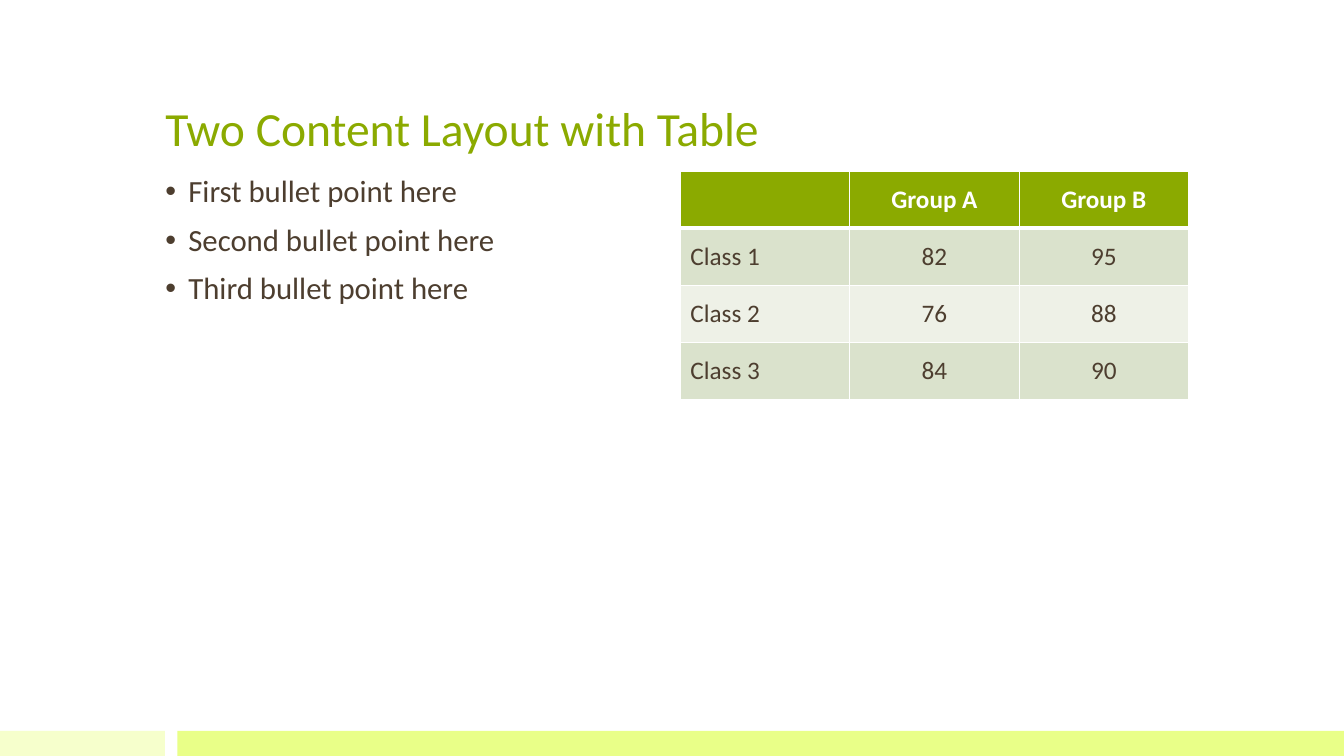
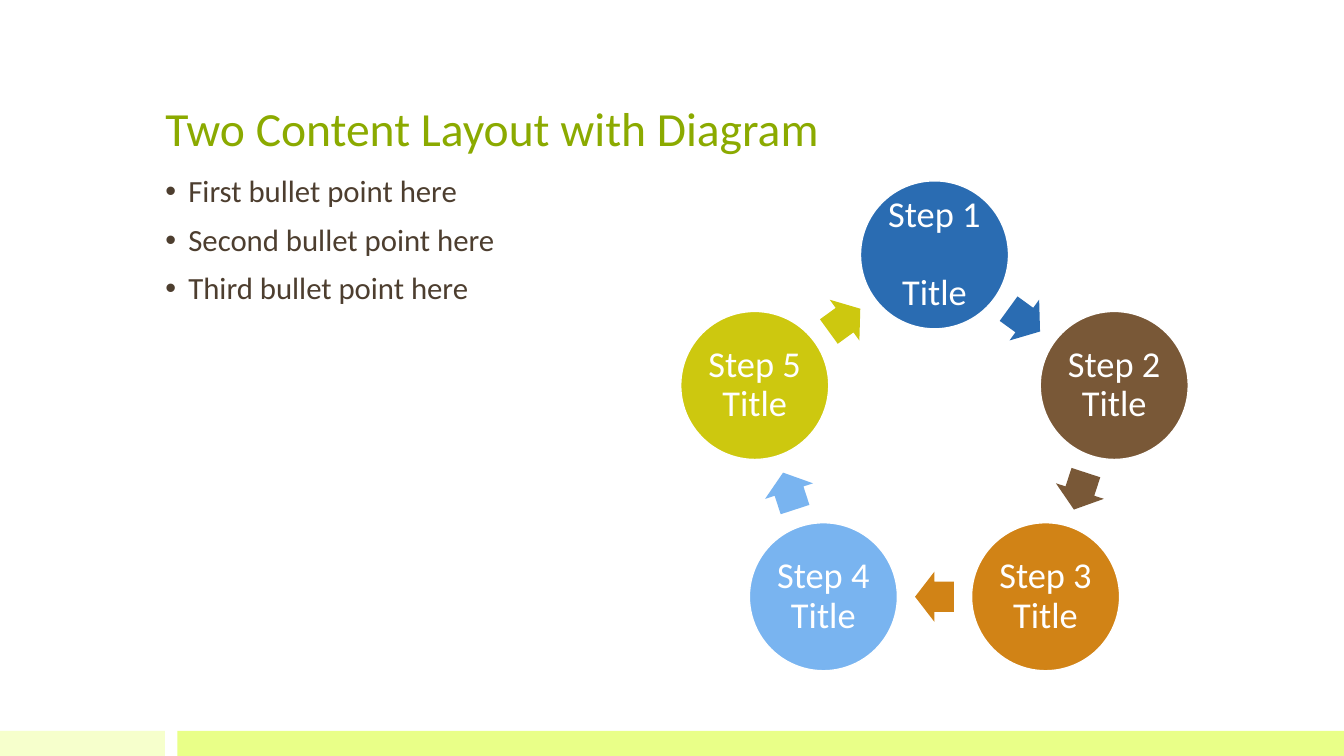
from collections import namedtuple
from copy import deepcopy
from dataclasses import dataclass
from math import cos, pi, radians, sin

from lxml.etree import SubElement
from pptx import Presentation
from pptx.dml.color import RGBColor
from pptx.enum.shapes import MSO_SHAPE
from pptx.enum.text import MSO_ANCHOR, PP_ALIGN
from pptx.oxml.ns import qn
from pptx.util import Emu, Pt

Box = namedtuple("Box", "x y w h")


@dataclass(frozen=True)
class Theme:
    """Colours, font and type sizes of the deck."""
    font: str = "Calibri"
    accent: str = "8BAA00"
    ink: str = "4D3E2F"
    white: str = "FFFFFF"
    bands: tuple = ("F6FFCC", "E9FF88")
    rows: tuple = ("DAE2CC", "EEF1E7")
    steps: tuple = ("2A6CB2", "795837", "D18316", "79B4F0", "CDC80F")
    title_size: int = 34
    body_size: int = 22
    table_size: int = 18
    step_size: int = 26


T = Theme()
SLIDE = Box(0, 0, 1280, 720)
TITLE = Box(148, 29, 984, 124)
LEFT = Box(148, 163, 484, 485)
RIGHT = Box(648, 163, 484, 485)
TABLE_HEIGHT = 218
BAND_TOP, BAND_SPLIT, BAND_GAP = 696, 157, 12
CIRCLE, RADIUS = 141, 180
ARROW_W, ARROW_H = 37, 48

BULLETS = ["First bullet point here", "Second bullet point here", "Third bullet point here"]
SCORES = [
    ["", "Group A", "Group B"],
    ["Class 1", "82", "95"],
    ["Class 2", "76", "88"],
    ["Class 3", "84", "90"],
]
STEPS = ["Step 1 \vTitle", "Step 2\vTitle", "Step 3\vTitle", "Step 4\vTitle", "Step 5\vTitle"]


def px(n):
    """Turn px into EMU."""
    return Emu(round(n * 9525))


def rgb(color):
    """Turn a hex string into a colour."""
    return RGBColor.from_string(color)


def style(p, size, color, bold=False):
    """Format the runs and line breaks of a paragraph."""
    for r in p.runs:
        r.font.name = T.font
        r.font.size = Pt(size)
        r.font.bold = bold
        r.font.color.rgb = rgb(color)
    for br in p._p.findall(qn("a:br")):
        br.append(deepcopy(p.runs[0]._r.rPr))


def add_text(s, box, text):
    """Add a wrapping text box and return its text frame."""
    tf = s.shapes.add_textbox(*map(px, box)).text_frame
    tf.word_wrap = True
    tf.text = text
    return tf


def add_shape(shapes, kind, box, fill, line=None):
    """Add a flat filled shape."""
    sp = shapes.add_shape(kind, *map(px, box))
    sp.shadow.inherit = False
    sp.fill.solid()
    sp.fill.fore_color.rgb = rgb(fill)
    if line:
        sp.line.color.rgb = rgb(line)
        sp.line.width = Pt(1)
    else:
        sp.line.fill.background()
    return sp


def add_bands(s, box):
    """Draw the two footer bands across a box."""
    start = BAND_SPLIT + BAND_GAP
    spans = [(0, BAND_SPLIT), (start, box.w - start)]
    for (x, w), color in zip(spans, T.bands):
        add_shape(s.shapes, MSO_SHAPE.RECTANGLE, Box(box.x + x, box.y, w, box.h), color)


def add_title(s, box, text):
    """Place the slide title at the foot of its box."""
    tf = add_text(s, box, text)
    tf.vertical_anchor = MSO_ANCHOR.BOTTOM
    style(tf.paragraphs[0], T.title_size, T.accent)


def add_bullets(s, box, items):
    """Place a bulleted list."""
    tf = add_text(s, box, "\n".join(items))
    for i, p in enumerate(tf.paragraphs):
        pPr = p._p.get_or_add_pPr()
        pPr.set("marL", str(px(22)))
        pPr.set("indent", str(-px(22)))
        SubElement(pPr, qn("a:buFont"), typeface="Arial")
        SubElement(pPr, qn("a:buChar"), char="•")
        p.line_spacing = 0.9
        p.space_before = Pt(11 if i else 0)
        style(p, T.body_size, T.ink)


def add_border(cell, side, width):
    """Draw one white cell border."""
    ln = SubElement(cell._tc.get_or_add_tcPr(), qn(f"a:ln{side}"), w=str(Pt(width)))
    fill = SubElement(ln, qn("a:solidFill"))
    SubElement(fill, qn("a:srgbClr"), val=T.white)


def add_scores(s, box, rows):
    """Place a table with a header row and banded body rows."""
    table = s.shapes.add_table(len(rows), len(rows[0]), *map(px, box)).table
    for i, row in enumerate(rows):
        header = i == 0
        for j, text in enumerate(row):
            cell = table.cell(i, j)
            cell.text = text
            cell.vertical_anchor = MSO_ANCHOR.MIDDLE
            widths = {"L": 1, "R": 1, "T": 3 if i == 1 else 1, "B": 3 if header else 1}
            for side, width in widths.items():
                add_border(cell, side, width)
            cell.fill.solid()
            cell.fill.fore_color.rgb = rgb(T.accent if header else T.rows[(i - 1) % 2])
            p = cell.text_frame.paragraphs[0]
            p.alignment = PP_ALIGN.CENTER if j else PP_ALIGN.LEFT
            style(p, T.table_size, T.white if header else T.ink, header)


def add_step(shapes, box, text, color):
    """Draw one labelled circle of the cycle."""
    sp = add_shape(shapes, MSO_SHAPE.OVAL, box, color, T.white)
    tf = sp.text_frame
    tf.word_wrap = True
    tf.vertical_anchor = MSO_ANCHOR.MIDDLE
    tf.margin_left = tf.margin_right = tf.margin_top = tf.margin_bottom = px(4)
    tf.text = text
    p = tf.paragraphs[0]
    p.alignment = PP_ALIGN.CENTER
    p.line_spacing = 0.9
    style(p, T.step_size, T.white)


def add_cycle(s, box, steps):
    """Place circles on a ring, each followed by an arrow to the next."""
    shapes = s.shapes.add_group_shape().shapes
    turn = 360 / len(steps)
    apothem = RADIUS * cos(pi / len(steps))
    cx = box.x + box.w / 2
    cy = box.y + (box.h + RADIUS - apothem) / 2

    def centred(angle, radius, w, h):
        """Return a box centred at an angle on the ring."""
        a = radians(angle)
        return Box(cx + radius * sin(a) - w / 2, cy - radius * cos(a) - h / 2, w, h)

    for i, (text, color) in enumerate(zip(steps, T.steps)):
        add_step(shapes, centred(i * turn, RADIUS, CIRCLE, CIRCLE), text, color)
        middle = (i + 0.5) * turn
        arrow = add_shape(shapes, MSO_SHAPE.RIGHT_ARROW,
                          centred(middle, apothem, ARROW_W, ARROW_H), color)
        arrow.adjustments[0] = 0.6
        arrow.adjustments[1] = 0.5
        arrow.rotation = middle


def add_content_slide(prs, title, add_content, box, content):
    """Add a slide with a title, bullets and content on the right."""
    s = prs.slides.add_slide(prs.slide_layouts[6])
    add_bands(s, Box(0, BAND_TOP, SLIDE.w, SLIDE.h - BAND_TOP))
    add_title(s, TITLE, title)
    add_bullets(s, LEFT, BULLETS)
    add_content(s, box, content)


def main():
    """Build and save the deck."""
    prs = Presentation()
    prs.slide_width, prs.slide_height = px(SLIDE.w), px(SLIDE.h)
    add_content_slide(prs, "Two Content Layout with Table", add_scores,
                      RIGHT._replace(h=TABLE_HEIGHT), SCORES)
    add_content_slide(prs, "Two Content Layout with Diagram", add_cycle, RIGHT, STEPS)
    prs.save("out.pptx")


if __name__ == "__main__":
    main()
